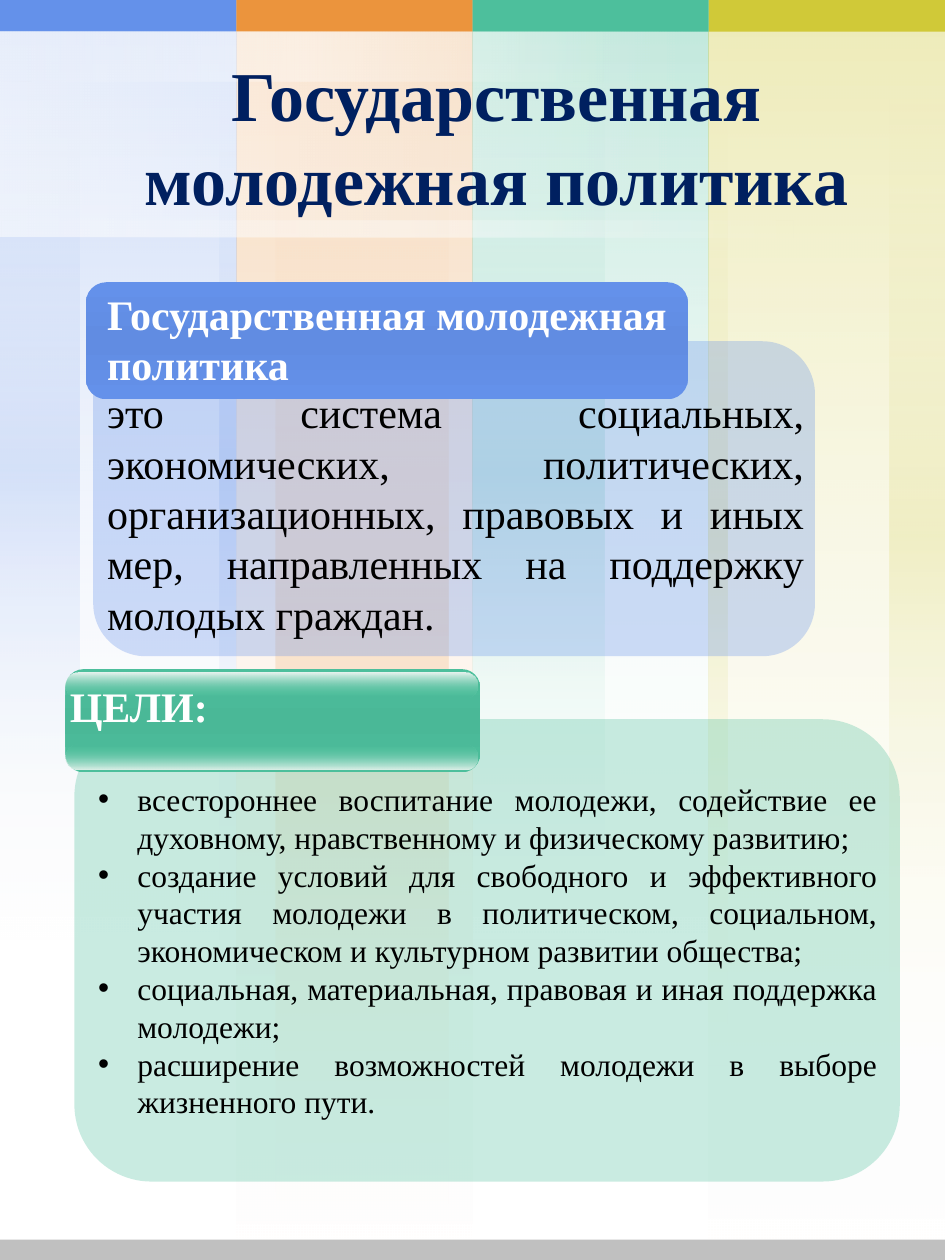
from dataclasses import dataclass

from lxml import etree
from pptx import Presentation
from pptx.dml.color import RGBColor
from pptx.enum.shapes import MSO_SHAPE
from pptx.enum.text import MSO_ANCHOR, MSO_AUTO_SIZE, PP_ALIGN
from pptx.oxml import parse_xml
from pptx.oxml.ns import nsdecls, qn
from pptx.util import Cm, Pt

RECTANGLE, ROUNDED = MSO_SHAPE.RECTANGLE, MSO_SHAPE.ROUNDED_RECTANGLE
LEFT, CENTER, JUSTIFY = PP_ALIGN.LEFT, PP_ALIGN.CENTER, PP_ALIGN.JUSTIFY
TOP, MIDDLE = MSO_ANCHOR.TOP, MSO_ANCHOR.MIDDLE


@dataclass(frozen=True)
class Theme:
    font: str = "Times New Roman"
    title_size: int = 40
    text_size: int = 24
    list_size: int = 18
    navy: str = "002060"
    black: str = "000000"
    white: str = "FFFFFF"
    gray: str = "C0C0C0"
    blue: str = "6491EA"
    blue_dark: str = "618CE2"
    orange: str = "EB943D"
    green: str = "4DBF9C"
    green_dark: str = "4AB897"
    green_pale: str = "E2F1EB"
    green_palest: str = "EAF4F0"
    yellow: str = "D0C938"


THEME = Theme()


@dataclass(frozen=True)
class Box:
    """Place and size in centimetres."""
    left: float
    top: float
    width: float
    height: float

    def lengths(self) -> tuple:
        return Cm(self.left), Cm(self.top), Cm(self.width), Cm(self.height)


@dataclass(frozen=True)
class Stop:
    position: int
    color: str
    alpha: int = 100


@dataclass(frozen=True)
class Strip:
    left: float
    width: float


@dataclass(frozen=True)
class Column:
    index: int
    color: str
    height: float
    strip_height: float
    strips: tuple[Strip, ...]


WIDTH, HEIGHT = 19.05, 25.4
COLUMN_WIDTH = WIDTH / 4
CAP_HEIGHT = 0.64
COLUMNS = (
    Column(1, THEME.orange, HEIGHT, HEIGHT, (Strip(5.56, 3.48),)),
    Column(2, THEME.green, 19.02, 19.02, (Strip(9.52, 2.67),)),
    Column(3, THEME.yellow, 25.3, 21.59, (Strip(14.29, 0.38), Strip(17.93, 1.12))),
    Column(0, THEME.blue, 19.02, 19.02, (Strip(4.42, 0.33), Strip(0, 1.6))),
)
WHITE_WASH = Box(5.08, -4.45, 4.14, 14.3)
WHITE_STRIPS = (Box(7.85, -3.4, 0.33, 16.03), Box(5.61, -4.95, 0.97, 12.19))

TITLE = "Государственная молодежная политика"
DEFINITION = (
    "это система социальных, экономических, политических, организационных, "
    "правовых и иных мер, направленных на поддержку молодых граждан."
)
GOALS = (
    "всестороннее воспитание молодежи, содействие ее духовному, нравственному "
    "и физическому развитию;",
    "создание условий для свободного и эффективного участия молодежи в "
    "политическом, социальном, экономическом и культурном развитии общества;",
    "социальная, материальная, правовая и иная поддержка молодежи;",
    "расширение возможностей молодежи в выборе жизненного пути.",
)


def fade_out(color: str, alpha: int) -> list[Stop]:
    return [Stop(0, color, alpha), Stop(100, THEME.white, 0)]


def glow(color: str, alpha: int) -> list[Stop]:
    return [Stop(0, THEME.white, 0), Stop(50, color, alpha), Stop(100, THEME.white, 0)]


def bevel(edge: str, middle: str) -> list[Stop]:
    return [Stop(0, edge), Stop(50, middle), Stop(100, edge)]


def add_block(slide, box: Box, color: str, alpha: int = 100, kind=RECTANGLE):
    shape = slide.shapes.add_shape(kind, *box.lengths())
    shape.shadow.inherit = False
    shape.line.fill.background()
    shape.fill.solid()
    shape.fill.fore_color.rgb = RGBColor.from_string(color)
    if alpha < 100:
        color_element = shape._element.spPr.find(f".//{qn('a:srgbClr')}")
        etree.SubElement(color_element, qn("a:alpha"), val=str(alpha * 1000))
    return shape


def add_gradient(slide, box: Box, stops: list[Stop], kind=RECTANGLE, rotation: int = 0):
    """Add a block whose stops run from its top to its bottom."""
    shape = add_block(slide, box, stops[0].color, kind=kind)
    shape.rotation = rotation
    stop_xml = "".join(
        f'<a:gs pos="{stop.position * 1000}"><a:srgbClr val="{stop.color}">'
        f'<a:alpha val="{stop.alpha * 1000}"/></a:srgbClr></a:gs>'
        for stop in stops
    )
    gradient = parse_xml(
        f'<a:gradFill {nsdecls("a")} rotWithShape="1"><a:gsLst>{stop_xml}</a:gsLst>'
        '<a:lin ang="5400000" scaled="0"/></a:gradFill>'
    )
    properties = shape._element.spPr
    properties.replace(properties.find(qn("a:solidFill")), gradient)
    return shape


def fill_text(frame, texts: tuple[str, ...], size: int, color: str, align,
              bold: bool = False, anchor=TOP, wrap: bool = True) -> None:
    frame.word_wrap = wrap
    frame.auto_size = MSO_AUTO_SIZE.NONE
    frame.vertical_anchor = anchor
    for index, text in enumerate(texts):
        paragraph = frame.add_paragraph() if index else frame.paragraphs[0]
        paragraph.text = text
        paragraph.alignment = align
        font = paragraph.font
        font.name, font.size, font.bold = THEME.font, Pt(size), bold
        font.color.rgb = RGBColor.from_string(color)


def add_text(slide, box: Box, texts: tuple[str, ...], size: int, color: str, align,
             bold: bool = False, wrap: bool = True):
    frame = slide.shapes.add_textbox(*box.lengths()).text_frame
    fill_text(frame, texts, size, color, align, bold, wrap=wrap)
    return frame


def add_bullets(frame) -> None:
    indent = Cm(0.79)
    for paragraph in frame.paragraphs:
        properties = paragraph._p.get_or_add_pPr()
        properties.set("marL", str(indent))
        properties.set("indent", str(-indent))
        bullet_font = parse_xml(f'<a:buFont {nsdecls("a")} typeface="Arial"/>')
        bullet = parse_xml(f'<a:buChar {nsdecls("a")} char="•"/>')
        for position, element in enumerate((bullet_font, bullet)):
            properties.insert(position, element)


def draw_backdrop(slide) -> None:
    for column in COLUMNS:
        left = column.index * COLUMN_WIDTH
        wash = Box(left, 0, COLUMN_WIDTH, column.height)
        add_gradient(slide, wash, fade_out(column.color, 20))
        for strip in column.strips:
            box = Box(strip.left, 0, strip.width, column.strip_height)
            add_gradient(slide, box, glow(column.color, 20))
        add_gradient(slide, wash, fade_out(column.color, 20))
    for column in COLUMNS:
        cap = Box(column.index * COLUMN_WIDTH, 0, COLUMN_WIDTH, CAP_HEIGHT)
        add_block(slide, cap, column.color)
    for _ in range(2):
        add_gradient(slide, WHITE_WASH, fade_out(THEME.white, 35), rotation=270)
    for strip in WHITE_STRIPS:
        add_gradient(slide, strip, glow(THEME.white, 35), rotation=270)
    add_block(slide, Box(0, 24.99, WIDTH, 0.41), THEME.gray)


def draw_title(slide) -> None:
    title = slide.shapes.title
    title.left, title.top, title.width, title.height = Box(0.97, 0.97, 18.08, 3.51).lengths()
    fill_text(title.text_frame, (TITLE,), THEME.title_size, THEME.navy, CENTER, True, MIDDLE)
    slide.shapes._spTree.append(title._element)  # in front of the backdrop


def draw_panel(slide, body: Box, header: Box, color: str, middle: str) -> None:
    panel = add_block(slide, body, color, alpha=30, kind=ROUNDED)
    panel.adjustments[0] = 0.167
    tab = add_gradient(slide, header, bevel(color, middle), kind=ROUNDED)
    tab.adjustments[0] = 0.175


def draw_definition(slide) -> None:
    draw_panel(slide, Box(1.88, 6.88, 14.55, 6.35), Box(1.73, 5.69, 12.14, 2.36),
               THEME.blue, THEME.blue_dark)
    add_text(slide, Box(1.91, 7.67, 14.55, 5.38), (DEFINITION,),
             THEME.text_size, THEME.black, JUSTIFY)
    add_text(slide, Box(1.91, 5.69, 11.96, 2.31), (TITLE,),
             THEME.text_size, THEME.white, LEFT, bold=True)


def draw_goals(slide) -> None:
    draw_panel(slide, Box(1.5, 14.5, 16.64, 9.32), Box(1.32, 13.49, 8.36, 2.08),
               THEME.green, THEME.green_dark)
    clear = THEME.green
    for top, stops in (
        (15.01, [Stop(0, clear, 0), Stop(100, THEME.green_pale)]),
        (13.56, [Stop(0, THEME.green_palest), Stop(100, clear, 0)]),
    ):
        gloss = add_gradient(slide, Box(1.32, top, 8.31, 0.51), stops, kind=ROUNDED)
        gloss.adjustments[0] = 0.5
    add_text(slide, Box(0.91, 13.59, 3.78, 1.52), ("ЦЕЛИ:",),
             THEME.text_size, THEME.white, CENTER, bold=True, wrap=False)
    add_bullets(add_text(slide, Box(1.73, 15.6, 16.21, 7.19), GOALS,
                         THEME.list_size, THEME.black, JUSTIFY))


def main() -> None:
    presentation = Presentation()
    presentation.slide_width, presentation.slide_height = Cm(WIDTH), Cm(HEIGHT)
    slide = presentation.slides.add_slide(presentation.slide_layouts.get_by_name("Title Only"))
    draw_backdrop(slide)
    draw_title(slide)
    draw_definition(slide)
    draw_goals(slide)
    presentation.save("out.pptx")


if __name__ == "__main__":
    main()
